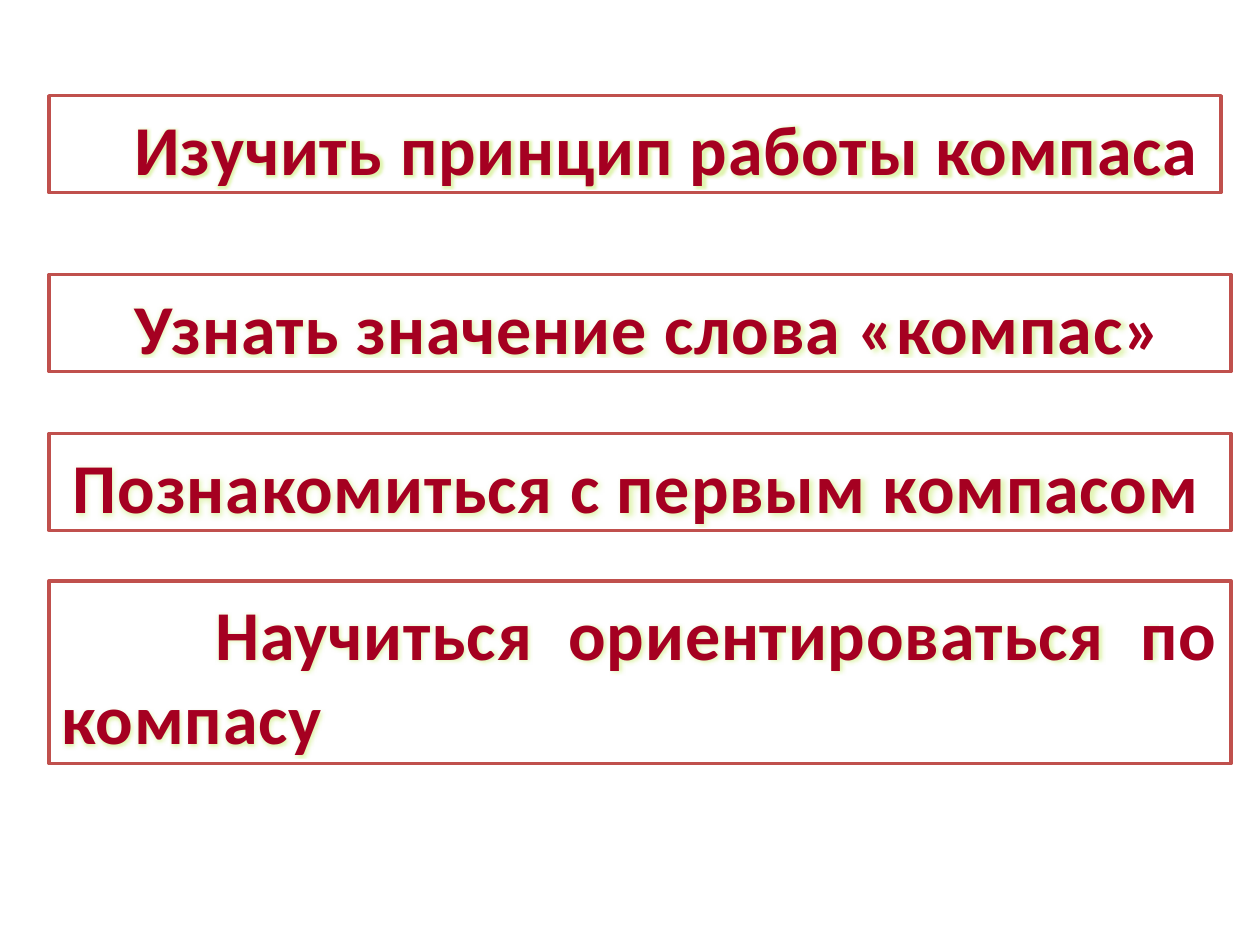
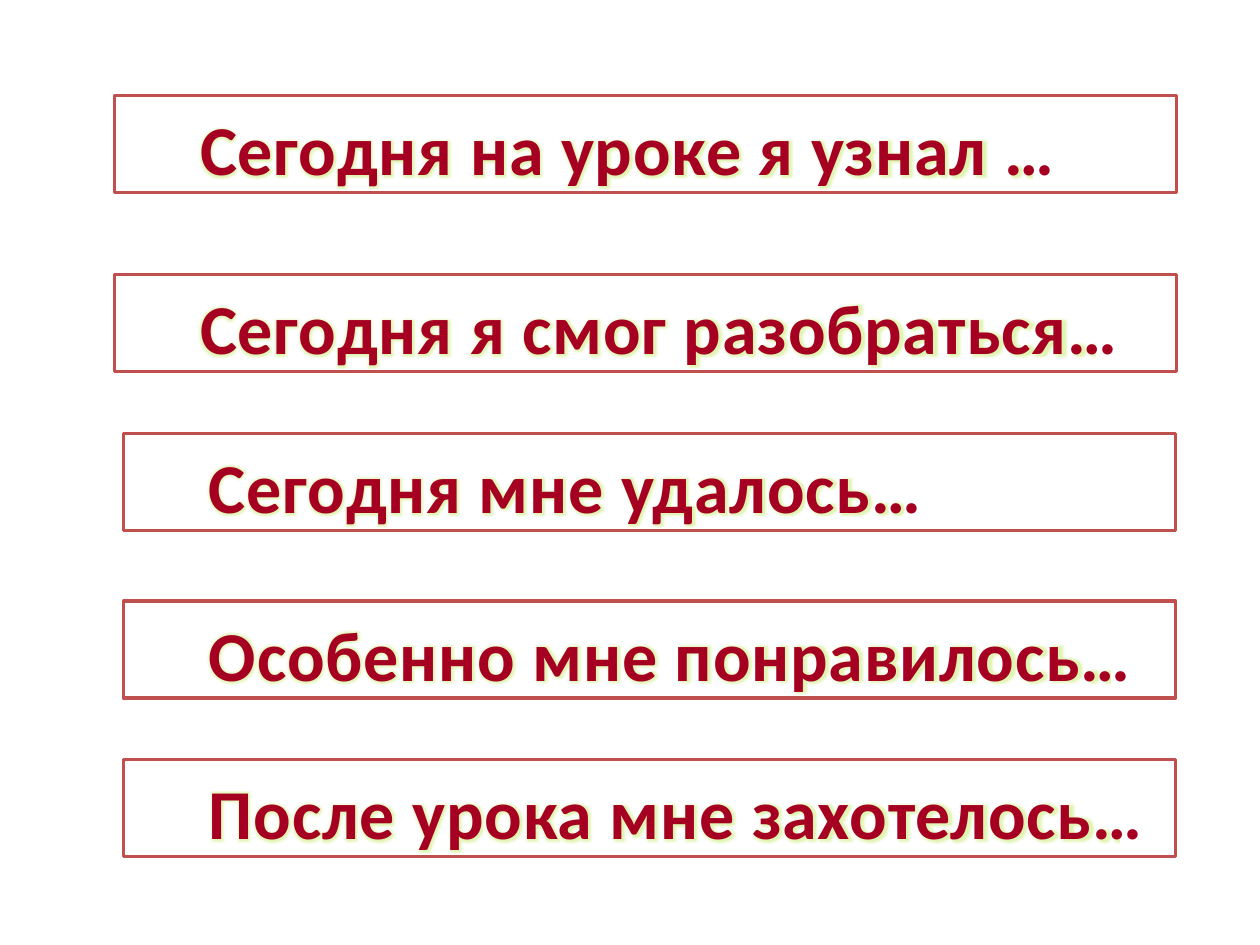
from dataclasses import dataclass

from lxml import etree
from pptx import Presentation
from pptx import util as u
from pptx.dml.color import RGBColor
from pptx.enum import shapes, text
from pptx.oxml import ns


@dataclass(frozen=True)
class Theme:
    """Colours, type and insets shared by the slides."""
    font: str = "Calibri"
    size: int = 40
    spacing: int = 50
    ink: str = "A50021"
    paper: str = "FFFFFF"
    border: str = "C0504D"
    border_width: int = 2
    glow: str = "A8E020"
    glow_radius: int = 45500
    glow_alpha: int = 35000
    side_inset: float = 0.1
    top_inset: float = 0.08
    bottom_inset: float = 0.02


THEME = Theme()
COLUMNS, ROWS = 100, 75
CELL = u.Inches(0.1)
ONE_LINE, TWO_LINES = 7.7, 14.5
INDENT = 5.8

GOALS = [
    ("Изучить принцип работы компаса", (3.9, 7.6, 93, ONE_LINE), INDENT),
    ("Узнать значение слова «компас»", (3.9, 21.8, 93.8, ONE_LINE), INDENT),
    ("Познакомиться с первым компасом", (3.9, 34.4, 93.8, ONE_LINE), 0.9),
    ("Научиться ориентироваться по компасу", (3.9, 46.1, 93.8, TWO_LINES), 12.2),
]
REFLECTIONS = [
    ("Сегодня на уроке я узнал …", (9.1, 7.6, 84.3, ONE_LINE), INDENT),
    ("Сегодня я смог разобраться…", (9.1, 21.8, 84.3, ONE_LINE), INDENT),
    ("Сегодня мне удалось…", (9.8, 34.4, 83.5, ONE_LINE), INDENT),
    ("Особенно мне понравилось…", (9.8, 47.7, 83.5, ONE_LINE), INDENT),
    ("После урока мне захотелось…", (9.8, 60.3, 83.5, ONE_LINE), INDENT),
]


def cells(count):
    """Turn a number of grid cells into a length."""
    return u.Emu(round(count * CELL))


def add_glow(run):
    """Give a coloured run a soft glow."""
    fill = run.font._element.find(ns.qn("a:solidFill"))
    effects = etree.Element(ns.qn("a:effectLst"))
    glow = etree.SubElement(effects, ns.qn("a:glow"), rad=str(THEME.glow_radius))
    colour = etree.SubElement(glow, ns.qn("a:srgbClr"), val=THEME.glow)
    etree.SubElement(colour, ns.qn("a:alpha"), val=str(THEME.glow_alpha))
    fill.addnext(effects)


def write_text(frame, words, *, indent=0, size=THEME.size, colour=THEME.ink,
               bold=True, align=text.PP_ALIGN.JUSTIFY):
    """Write one formatted paragraph in a text frame."""
    paragraph = frame.paragraphs[0]
    paragraph.alignment = align
    paragraph._p.get_or_add_pPr().set("indent", str(cells(indent)))
    run = paragraph.add_run()
    run.text = words
    run.font.name = THEME.font
    run.font.size = u.Pt(size)
    run.font.bold = bold
    run.font.color.rgb = RGBColor.from_string(colour)
    run.font._element.set("spc", str(THEME.spacing))
    add_glow(run)


def add_panel(slide, words, box, indent):
    """Place one bordered statement in its grid box."""
    shape = slide.shapes.add_shape(shapes.MSO_SHAPE.RECTANGLE, *map(cells, box))
    shape.shadow.inherit = False
    shape.fill.solid()
    shape.fill.fore_color.rgb = RGBColor.from_string(THEME.paper)
    shape.line.color.rgb = RGBColor.from_string(THEME.border)
    shape.line.width = u.Pt(THEME.border_width)
    frame = shape.text_frame
    frame.word_wrap = True
    frame.auto_size = text.MSO_AUTO_SIZE.SHAPE_TO_FIT_TEXT
    frame.vertical_anchor = text.MSO_ANCHOR.TOP
    frame.margin_left = frame.margin_right = u.Inches(THEME.side_inset)
    frame.margin_top = u.Inches(THEME.top_inset)
    frame.margin_bottom = u.Inches(THEME.bottom_inset)
    write_text(frame, words, indent=indent)


def add_statement_slide(presentation, statements):
    """Add a slide of stacked statements."""
    slide = presentation.slides.add_slide(presentation.slide_layouts[6])
    for words, box, indent in statements:
        add_panel(slide, words, box, indent)


def main():
    """Build and save the presentation."""
    presentation = Presentation()
    presentation.slide_width = cells(COLUMNS)
    presentation.slide_height = cells(ROWS)
    for statements in (GOALS, REFLECTIONS):
        add_statement_slide(presentation, statements)
    presentation.save("out.pptx")


if __name__ == "__main__":
    main()
